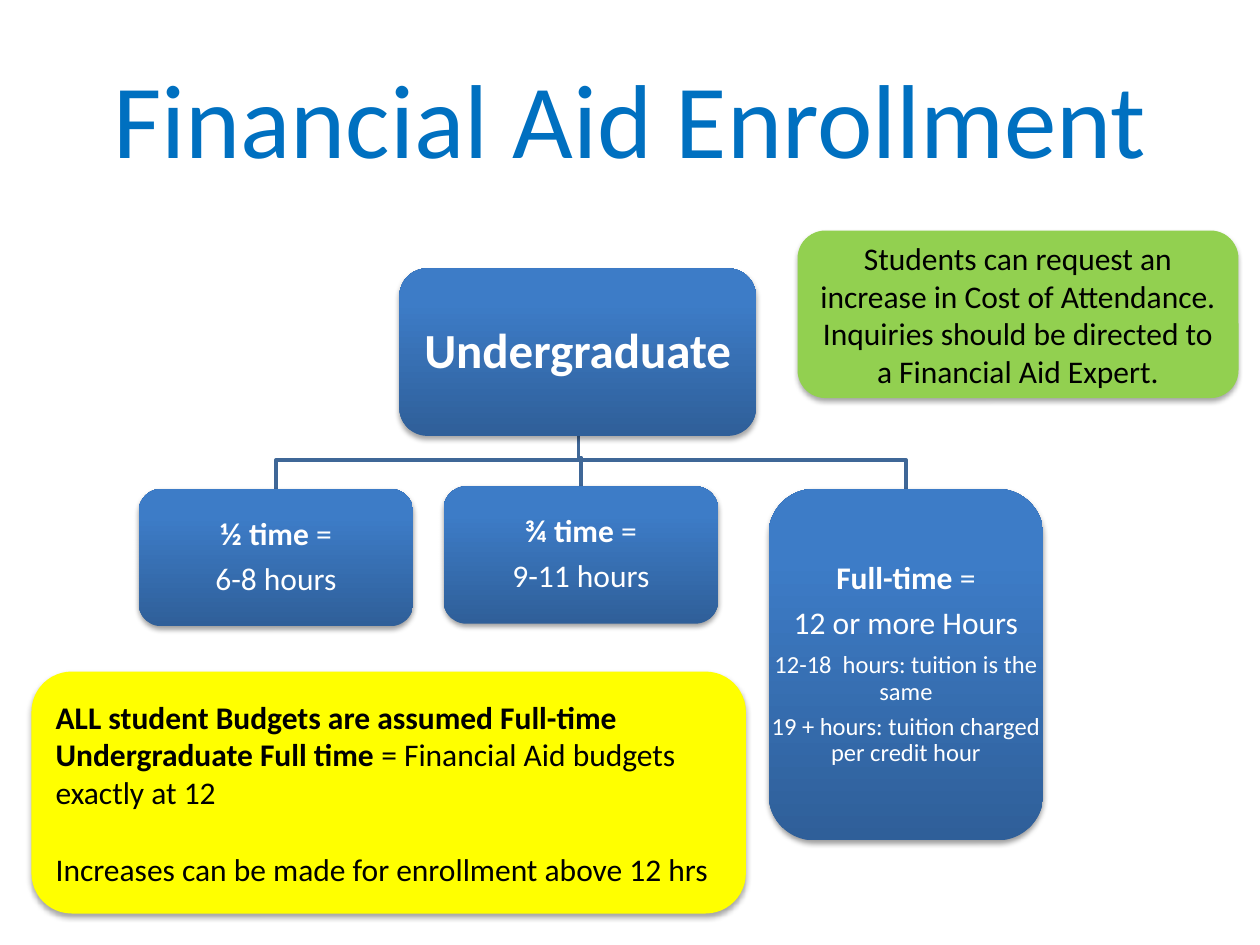
from lxml import etree
from pptx import Presentation
from pptx.dml.color import RGBColor
from pptx.enum.shapes import MSO_SHAPE
from pptx.enum.text import MSO_ANCHOR, PP_ALIGN
from pptx.oxml.ns import qn
from pptx.util import Inches, Pt

ROUND = MSO_SHAPE.ROUNDED_RECTANGLE
PROCESS = MSO_SHAPE.FLOWCHART_ALTERNATE_PROCESS
MIDDLE = MSO_ANCHOR.MIDDLE
LEFT, CENTER = PP_ALIGN.LEFT, PP_ALIGN.CENTER

TITLE = RGBColor(0x00, 0x70, 0xC0)
DARK = RGBColor(0x2F, 0x5F, 0x99)
LIGHT = RGBColor(0x3D, 0x7C, 0xC7)
LINK = RGBColor(0x3F, 0x67, 0x97)
YELLOW = RGBColor(0xFF, 0xFF, 0x00)
GREEN = RGBColor(0x92, 0xD0, 0x50)
BLACK = RGBColor(0x00, 0x00, 0x00)
WHITE = RGBColor(0xFF, 0xFF, 0xFF)


class Deck:
    font = "Calibri"

    def __init__(self):
        self.prs = Presentation()
        self.prs.slide_width = Inches(10)
        self.prs.slide_height = Inches(7.5)
        self.slide = self.prs.slides.add_slide(self.prs.slide_layouts[5])
        self.shapes = self.slide.shapes

    def style(self, run, size, color, bold=False):
        run.font.name = self.font
        run.font.size = Pt(size)
        run.font.bold = bold
        run.font.color.rgb = color

    def title(self, text, box):
        head = self.shapes.title
        head.left, head.top, head.width, head.height = map(Inches, box)
        frame = head.text_frame
        frame.text = text
        frame.vertical_anchor = MIDDLE
        frame.paragraphs[0].alignment = CENTER
        self.style(frame.paragraphs[0].runs[0], 60, TITLE)

    def label(self, frame, lines, color, align):
        frame.word_wrap = True
        frame.vertical_anchor = MIDDLE
        for i, (size, strong, plain) in enumerate(lines):
            para = frame.add_paragraph() if i else frame.paragraphs[0]
            para.alignment = align
            for text, bold in ((strong, True), (plain, False)):
                if text:
                    run = para.add_run()
                    run.text = text
                    self.style(run, size, color, bold)

    def shade(self, shape, dist, alpha):
        shape.shadow.inherit = False
        effect = shape._element.spPr.find(qn("a:effectLst"))
        outer = etree.SubElement(effect, qn("a:outerShdw"), blurRad=str(Pt(3.1)),
                                 dist=str(Pt(dist)), dir="5400000", rotWithShape="0")
        color = etree.SubElement(outer, qn("a:srgbClr"), val="000000")
        etree.SubElement(color, qn("a:alpha"), val=str(alpha * 1000))

    def block(self, kind, box, dist=1.8, alpha=35):
        shape = self.shapes.add_shape(kind, *map(Inches, box))
        shape.line.fill.background()
        self.shade(shape, dist, alpha)
        return shape

    def note(self, box, fill, lines, align):
        shape = self.block(ROUND, box)
        shape.fill.solid()
        shape.fill.fore_color.rgb = fill
        self.label(shape.text_frame, lines, BLACK, align)
        return shape.text_frame

    def node(self, box, lines, inset=0.01, dist=1.6, alpha=38):
        fill = self.block(PROCESS, box, dist, alpha).fill
        fill.gradient()
        fill.gradient_angle = 90
        for stop, spot, color in zip(fill.gradient_stops, (0, 0.8), (DARK, LIGHT)):
            stop.position = spot
            stop.color.rgb = color
        frame = self.shapes.add_textbox(*map(Inches, box)).text_frame
        frame.margin_left = frame.margin_right = Inches(inset)
        frame.margin_top = frame.margin_bottom = Inches(inset)
        self.label(frame, lines, WHITE, CENTER)
        for para, line in zip(frame.paragraphs, lines):
            para.line_spacing = 0.9
            para.space_after = Pt(0.35 * line[0])

    def link(self, start, end):
        (x, y), (right, base) = start, end
        bend = base - 0.23
        points = [(x, bend), (right, bend), (right, base)]
        pen = self.shapes.build_freeform(Inches(x), Inches(y))
        pen.add_line_segments([(Inches(a), Inches(b)) for a, b in points], close=False)
        shape = pen.convert_to_shape()
        shape.shadow.inherit = False
        shape.fill.background()
        shape.line.color.rgb = LINK
        shape.line.width = Pt(2)


def main():
    deck = Deck()
    deck.title("Financial Aid Enrollment", (0.5, 0.3, 9, 1.25))

    root = (3.17, 2.13, 2.83, 1.33)
    wide = 2.18
    half = (1.1, 3.88, wide, 1.09)
    most = (3.52, 3.86, wide, 1.09)
    full = (6.1, 3.88, wide, 2.79)
    for left, top, width, _ in (half, full, most):
        deck.link((4.59, 3.46), (left + width / 2, top))

    deck.node(root, [(28, "Undergraduate", "")], 0.02, 1.8, 35)
    deck.node(most, [(18, "¾ time ", "="), (18, "", "9-11 hours")])
    deck.node(full, [
        (18, "Full-time", " ="),
        (18, "", "12 or more Hours"),
        (14, "", "12-18  hours: tuition is the same"),
        (14, "", "19 + hours: tuition charged per credit hour"),
    ])
    deck.node(half, [(18, "½ time ", "="), (18, "", "6-8 hours")])

    frame = deck.note((0.25, 5.33, 5.67, 1.92), YELLOW, [
        (18, "ALL student Budgets are assumed Full-time", ""),
        (18, "Undergraduate Full time ", "= Financial Aid budgets exactly at 12"),
        (18, "", "Increases can be made for enrollment above 12 hrs"),
    ], LEFT)
    frame.paragraphs[-1].space_before = Pt(22)

    deck.note((6.33, 1.83, 3.5, 1.33), GREEN, [
        (18, "", "Students can request an increase in Cost of Attendance."),
        (18, "", "Inquiries should be directed to a Financial Aid Expert."),
    ], CENTER)

    deck.prs.save("out.pptx")


if __name__ == "__main__":
    main()
